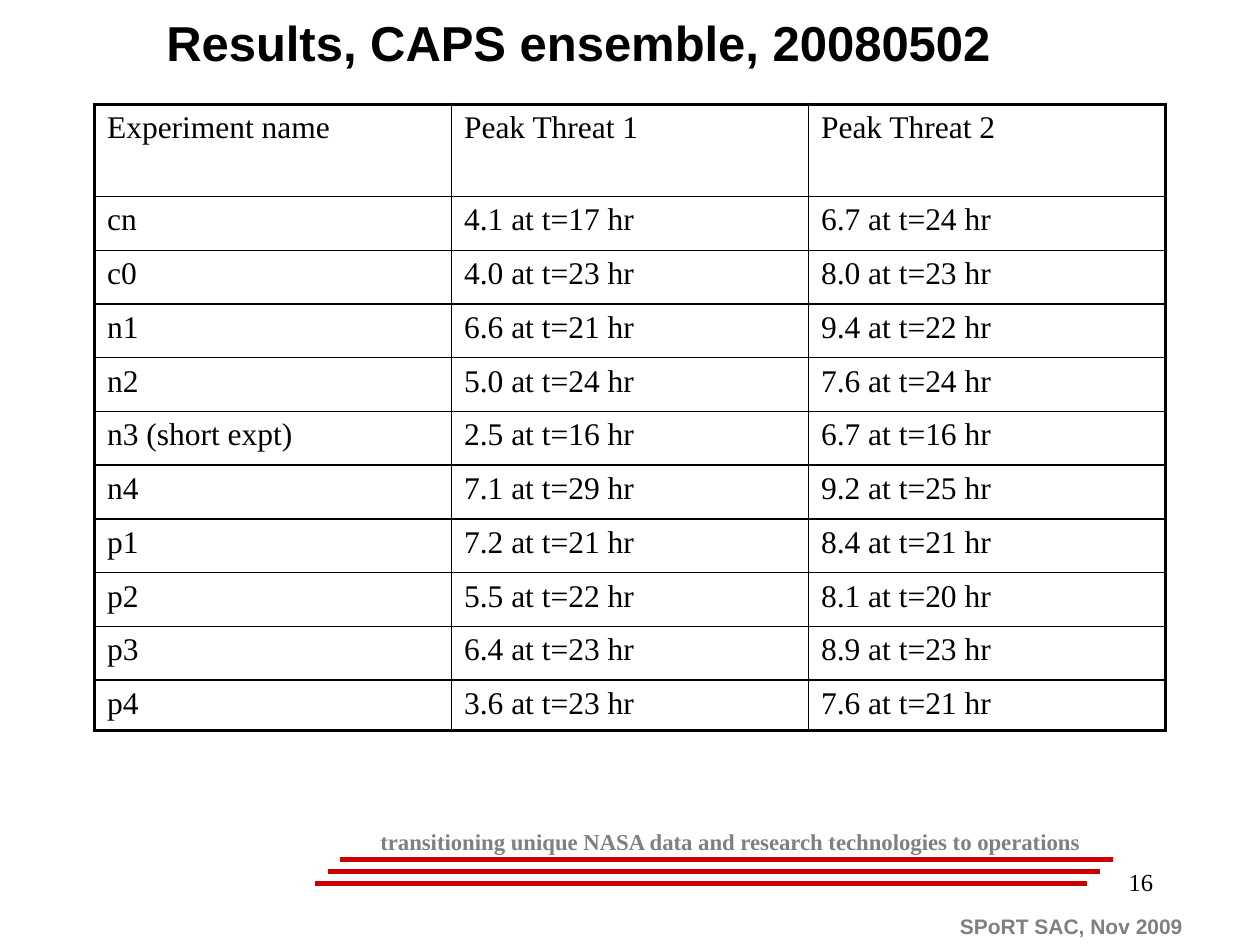
from pptx import Presentation
from pptx.dml.color import RGBColor
from pptx.enum.shapes import MSO_CONNECTOR
from pptx.enum.text import MSO_ANCHOR, PP_ALIGN
from pptx.oxml.ns import qn
from pptx.util import Inches, Pt
from lxml.etree import SubElement

SERIF, SANS = "Times New Roman", "Arial"
BLACK, GRAY, RED = "000000", "808080", "CC0000"
THIN, THICK = 1, 2.25

RESULTS = [
    ("Experiment name", "Peak Threat 1", "Peak Threat 2"),
    ("cn", "4.1 at t=17 hr", "6.7 at t=24 hr"),
    ("c0", "4.0 at t=23 hr", "8.0 at t=23 hr"),
    ("n1", "6.6 at t=21 hr", "9.4 at t=22 hr"),
    ("n2", "5.0 at t=24 hr", "7.6 at t=24 hr"),
    ("n3 (short expt)", "2.5 at t=16 hr", "6.7 at t=16 hr"),
    ("n4", "7.1 at t=29 hr", "9.2 at t=25 hr"),
    ("p1", "7.2 at t=21 hr", "8.4 at t=21 hr"),
    ("p2", "5.5 at t=22 hr", "8.1 at t=20 hr"),
    ("p3", "6.4 at t=23 hr", "8.9 at t=23 hr"),
    ("p4", "3.6 at t=23 hr", "7.6 at t=21 hr"),
]


def color(hex_string):
    return RGBColor.from_string(hex_string)


def add_run(paragraph, text, size, font_name, hex_string=BLACK, bold=False):
    run = paragraph.add_run()
    run.text = text
    font = run.font
    font.size, font.name, font.bold = Pt(size), font_name, bold
    font.color.rgb = color(hex_string)


def add_label(slide, box, text, size, font_name, hex_string=BLACK,
              bold=False, align=PP_ALIGN.LEFT, wrap=False):
    frame = slide.shapes.add_textbox(*map(Inches, box)).text_frame
    frame.word_wrap = wrap
    frame.paragraphs[0].alignment = align
    add_run(frame.paragraphs[0], text, size, font_name, hex_string, bold)


def set_border(cell, side, width):
    line = SubElement(cell._tc.get_or_add_tcPr(), qn(f"a:ln{side}"), w=str(Pt(width)))
    fill = SubElement(line, qn("a:solidFill"))
    SubElement(fill, qn("a:srgbClr"), val=BLACK)


def add_title(slide, box):
    title = slide.shapes.title
    title.left, title.top, title.width, title.height = map(Inches, box)
    frame = title.text_frame
    frame.vertical_anchor = MSO_ANCHOR.MIDDLE
    frame.margin_right = Inches(0.59)  # centres the title left of the box middle
    frame.paragraphs[0].alignment = PP_ALIGN.CENTER
    add_run(frame.paragraphs[0], "Results, CAPS ensemble, 20080502", 28, SANS, bold=True)


def add_results_table(slide, box):
    left, top, width, height = map(Inches, box)
    header_height, last_height = Inches(0.73), Inches(0.37)
    row_count, column_count = len(RESULTS), len(RESULTS[0])
    table = slide.shapes.add_table(row_count, column_count, left, top, width, height).table
    table.first_row = table.horz_banding = False

    # Equal columns, and equal rows between the header and the last row
    for column in table.columns:
        column.width = width // column_count
    for row in table.rows:
        row.height = (height - header_height - last_height) // (row_count - 2)
    table.rows[0].height = header_height
    table.rows[row_count - 1].height = last_height

    # Thick outer frame, thin inner grid
    for i, values in enumerate(RESULTS):
        for j, value in enumerate(values):
            cell = table.cell(i, j)
            outer_sides = {"L": j == 0, "R": j == column_count - 1,
                           "T": i == 0, "B": i == row_count - 1}
            for side, is_outer in outer_sides.items():
                set_border(cell, side, THICK if is_outer else THIN)
            cell.fill.background()
            add_run(cell.text_frame.paragraphs[0], value, 18, SERIF)


def add_motto(slide, box):
    left, top, width, height = box
    # Three red rules, each stepping down and to the left
    for step in range(3):
        start_x, y = left - 0.1 * step, top + 0.3 + 0.095 * step
        rule = slide.shapes.add_connector(
            MSO_CONNECTOR.STRAIGHT, Inches(start_x), Inches(y),
            Inches(start_x + width), Inches(y))
        rule.line.color.rgb = color(RED)
        rule.line.width = Pt(3)
        SubElement(rule._element.spPr, qn("a:effectLst"))
    add_label(slide, (left + 0.22, top, 6.48, height),
              "transitioning unique NASA data and research technologies to operations",
              13, SERIF, GRAY, bold=True)


def add_footer(slide, box):
    left, top, width, height = box
    add_label(slide, (left, top, 2.08, 0.5), "16", 14, SERIF,
              align=PP_ALIGN.RIGHT, wrap=True)
    add_label(slide, (left + width - 2.02, top + height - 0.3, 2.02, 0.3),
              "SPoRT SAC, Nov 2009", 12, SANS, GRAY, bold=True)


def main():
    presentation = Presentation()
    presentation.slide_width, presentation.slide_height = Inches(10), Inches(7.5)
    slide = presentation.slides.add_slide(presentation.slide_layouts[5])
    add_footer(slide, (7.17, 6.83, 2.37, 0.67))
    add_motto(slide, (2.7, 6.52, 6.13, 0.32))
    add_title(slide, (0.42, 0, 8.83, 0.67))
    add_results_table(slide, (0.75, 0.83, 8.5, 4.94))
    presentation.save("out.pptx")


if __name__ == "__main__":
    main()
